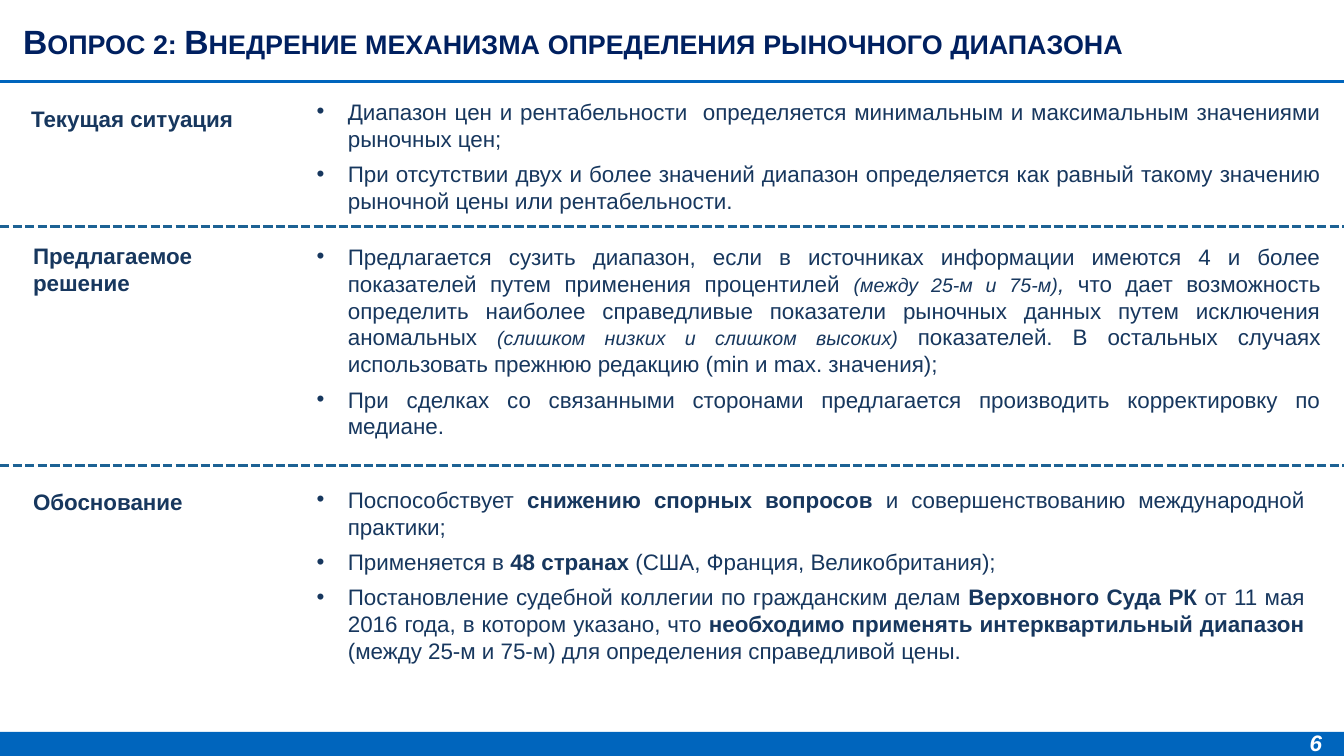
from lxml.etree import SubElement
from pptx import Presentation
from pptx.dml.color import RGBColor
from pptx.enum.dml import MSO_LINE_DASH_STYLE as Dash
from pptx.enum.shapes import MSO_CONNECTOR as Connector, MSO_SHAPE as Shape
from pptx.enum.text import MSO_ANCHOR as Anchor, MSO_AUTO_SIZE as AutoSize, PP_ALIGN as Align
from pptx.oxml.ns import qn
from pptx.util import Inches, Pt

WIDTH, HEIGHT = 13.33, 7.5
BLUE, DASH_BLUE, NAVY, TEXT, WHITE = "0065BD", "1D6294", "002060", "17375E", "FFFFFF"
FONT = "Arial"
COMPARISON_LAYOUT = 4
LIST_LEFT, INDENT = 3.04, 0.31

# Each paragraph is a list of (text, style) spans
PLAIN, BOLD, NOTE = {}, {"bold": True}, {"italic": True, "size": 14}

# Label, label box, list box, paragraphs
SECTIONS = [
    ("Текущая ситуация", (0.21, 0.99, 2.67, 0.37), (LIST_LEFT, 0.92, 10.16, 1.26), [
        [("Диапазон цен и рентабельности  определяется минимальным и максимальным "
          "значениями рыночных цен;", PLAIN)],
        [("При отсутствии двух и более значений диапазон определяется как равный "
          "такому значению рыночной цены или рентабельности.", PLAIN)],
    ]),
    ("Предлагаемое решение", (0.23, 2.35, 2.67, 0.64), (LIST_LEFT, 2.36, 10.16, 2.07), [
        [("Предлагается сузить диапазон, если в источниках информации имеются 4 и более "
          "показателей путем применения процентилей ", PLAIN),
         ("(между 25-м и 75-м)", NOTE),
         (", ", {"italic": True}),
         ("что дает возможность определить наиболее справедливые показатели рыночных "
          "данных путем исключения аномальных ", PLAIN),
         ("(слишком низких и слишком высоких) ", NOTE),
         ("показателей. В остальных случаях использовать прежнюю редакцию "
          "(min и max. значения);", PLAIN)],
        [("При сделках со связанными сторонами предлагается производить корректировку "
          "по медиане.", PLAIN)],
    ]),
    ("Обоснование", (0.23, 4.79, 1.96, 0.37), (LIST_LEFT, 4.77, 10, 1.88), [
        [("Поспособствует ", PLAIN),
         ("снижению спорных вопросов ", BOLD),
         ("и совершенствованию международной практики;", PLAIN)],
        [("Применяется в ", PLAIN),
         ("48 странах ", BOLD),
         ("(США, Франция, Великобритания);", PLAIN)],
        [("Постановление судебной коллегии по гражданским делам ", PLAIN),
         ("Верховного Суда РК ", BOLD),
         ("от 11 мая 2016 года, в котором указано, что ", PLAIN),
         ("необходимо применять интерквартильный диапазон ", BOLD),
         ("(между 25-м и 75-м) для определения справедливой цены.", PLAIN)],
    ]),
]
DIVIDERS = [2.25, 4.62]


def color(value):
    return RGBColor.from_string(value)


def place(shape, box):
    shape.left, shape.top, shape.width, shape.height = map(Inches, box)


def prepare_frame(shape, anchor=Anchor.TOP):
    frame = shape.text_frame
    frame.word_wrap = True
    frame.auto_size = AutoSize.NONE
    frame.vertical_anchor = anchor
    return frame


def add_span(para, text, size=16, hue=TEXT, bold=False, italic=False):
    span = para.add_run()
    span.text = text
    font = span.font
    font.name, font.size, font.bold, font.italic = FONT, Pt(size), bold, italic
    font.color.rgb = color(hue)
    return span


def add_label(page, box, text, **style):
    label = page.shapes.add_textbox(*map(Inches, box))
    add_span(prepare_frame(label).paragraphs[0], text, bold=True, **style)


def add_rule(page, top, hue, dash=None):
    rule = page.shapes.add_connector(
        Connector.STRAIGHT, 0, Inches(top), Inches(WIDTH), Inches(top))
    rule.line.color.rgb = color(hue)
    rule.line.width = Pt(2.25)
    if dash:
        rule.line.dash_style = dash
    SubElement(rule._element.spPr, qn("a:effectLst"))


def set_bullet(para):
    props = para._p.get_or_add_pPr()
    props.set("marL", str(Inches(INDENT)))
    props.set("indent", str(-Inches(INDENT)))
    SubElement(props, qn("a:buFont")).set("typeface", FONT)
    SubElement(props, qn("a:buChar")).set("char", "•")


def fill_title(title, box, text):
    place(title, box)
    para = prepare_frame(title, Anchor.MIDDLE).paragraphs[0]
    para.alignment = Align.LEFT
    span = add_span(para, text, size=24, hue=NAVY, bold=True)
    span.font._element.set("cap", "small")


def fill_list(body, box, paragraphs):
    place(body, box)
    frame = prepare_frame(body)
    for index, spans in enumerate(paragraphs):
        para = frame.add_paragraph() if index else frame.paragraphs[0]
        para.alignment = Align.JUSTIFY
        para.line_spacing = 1.0
        para.space_before = Pt(6)
        set_bullet(para)
        for text, style in spans:
            add_span(para, text, **style)


def add_footer(page, box, number):
    left, top, width, height = box
    band = page.shapes.add_shape(Shape.RECTANGLE, *map(Inches, box))
    band.shadow.inherit = False
    band.fill.solid()
    band.fill.fore_color.rgb = color(BLUE)
    band.line.fill.background()
    add_label(page, (left + width - 0.44, top - 0.08, 0.44, 0.37), number,
              hue=WHITE, italic=True)


def main():
    deck = Presentation()
    deck.slide_width, deck.slide_height = Inches(WIDTH), Inches(HEIGHT)
    page = deck.slides.add_slide(deck.slide_layouts[COMPARISON_LAYOUT])
    title, *bodies = list(page.placeholders)

    # Header
    fill_title(title, (0.13, 0.01, 12.36, 0.79),
               "Вопрос 2: Внедрение механизма определения рыночного диапазона")
    add_rule(page, 0.81, BLUE)

    # Labelled sections
    for body, (label, label_box, list_box, paragraphs) in zip(bodies, SECTIONS):
        add_label(page, label_box, label)
        fill_list(body, list_box, paragraphs)
    for top in DIVIDERS:
        add_rule(page, top, DASH_BLUE, Dash.SQUARE_DOT)

    # Unused placeholders
    for body in bodies[len(SECTIONS):]:
        body._element.getparent().remove(body._element)

    # Footer
    add_footer(page, (0, 7.26, WIDTH, 0.24), "6")
    deck.save("out.pptx")


if __name__ == "__main__":
    main()
